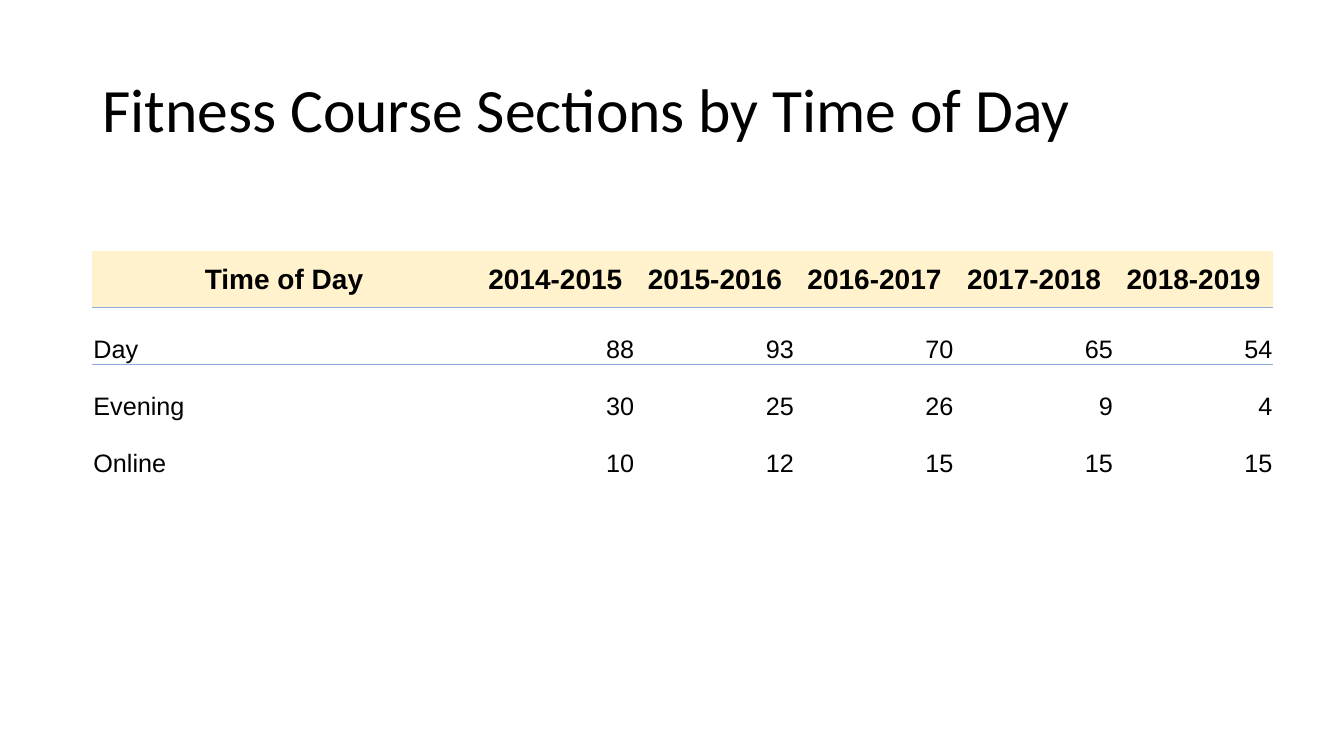
"""Build a slide with a table of fitness course sections by time of day."""
from lxml.etree import SubElement
from pptx import Presentation
from pptx.dml.color import RGBColor
from pptx.enum.text import MSO_ANCHOR, PP_ALIGN
from pptx.oxml import parse_xml
from pptx.oxml.ns import nsdecls, qn
from pptx.util import Pt

PX = 9525
THEME = {
    "text": "000000", "header": "FFF2CC", "rule": "8EA9DB",
    "title_font": "Calibri", "table_font": "Arial",
    "title_size": 44, "header_size": 20, "body_size": 18,
}
NO_STYLE = "{2D5ABB26-0587-4C30-8999-92F81FD0307C}"
ROWS = [
    ["Time of Day", "2014-2015", "2015-2016", "2016-2017", "2017-2018", "2018-2019"],
    ["Day", 88, 93, 70, 65, 54],
    ["Evening", 30, 25, 26, 9, 4],
    ["Online", 10, 12, 15, 15, 15],
]
LABEL_W, YEAR_W, ROW_H = 365, 152, 54


def style(p, font, size, bold=False):
    f = p.runs[0].font
    f.name, f.size, f.bold = font, Pt(size), bold
    f.color.rgb = RGBColor.from_string(THEME["text"])


def rule(cell, side):
    ln = parse_xml(f'<a:{side} {nsdecls("a")} w="{Pt(0.5)}"/>')
    fill = SubElement(ln, qn("a:solidFill"))
    SubElement(fill, qn("a:srgbClr"), val=THEME["rule"])
    cell._tc.get_or_add_tcPr().insert(0, ln)


prs = Presentation()
prs.slide_width, prs.slide_height = 1280 * PX, 720 * PX
s = prs.slides.add_slide(prs.slide_layouts[6])

title = s.shapes.add_textbox(88 * PX, 38 * PX, 1104 * PX, 139 * PX)
tf = title.text_frame
tf.word_wrap = True
tf.vertical_anchor = MSO_ANCHOR.MIDDLE
p = tf.paragraphs[0]
p.text = "Fitness Course Sections by Time of Day"
p.line_spacing = 0.9
style(p, THEME["title_font"], THEME["title_size"])

widths = [LABEL_W] + [YEAR_W] * (len(ROWS[0]) - 1)
frame = s.shapes.add_table(len(ROWS), len(widths), 88 * PX, 239 * PX,
                           sum(widths) * PX, len(ROWS) * ROW_H * PX)
table = frame.table
table.horz_banding = False
table._tbl.tblPr.find(qn("a:tableStyleId")).text = NO_STYLE
for column, width in zip(table.columns, widths):
    column.width = width * PX

for i, row in enumerate(ROWS):
    table.rows[i].height = ROW_H * PX
    header = i == 0
    for j, value in enumerate(row):
        cell = table.cell(i, j)
        cell.margin_left = cell.margin_right = cell.margin_top = PX
        cell.margin_bottom = 0
        cell.vertical_anchor = MSO_ANCHOR.MIDDLE if header else MSO_ANCHOR.BOTTOM
        p = cell.text_frame.paragraphs[0]
        p.text = str(value)
        if header:
            p.alignment = PP_ALIGN.CENTER
            cell.fill.solid()
            cell.fill.fore_color.rgb = RGBColor.from_string(THEME["header"])
            rule(cell, "lnB")
        else:
            p.alignment = PP_ALIGN.RIGHT if j else PP_ALIGN.LEFT
            cell.fill.background()
            if i == 1:
                rule(cell, "lnT")
        size = THEME["header_size" if header else "body_size"]
        style(p, THEME["table_font"], size, header)

prs.save("out.pptx")
